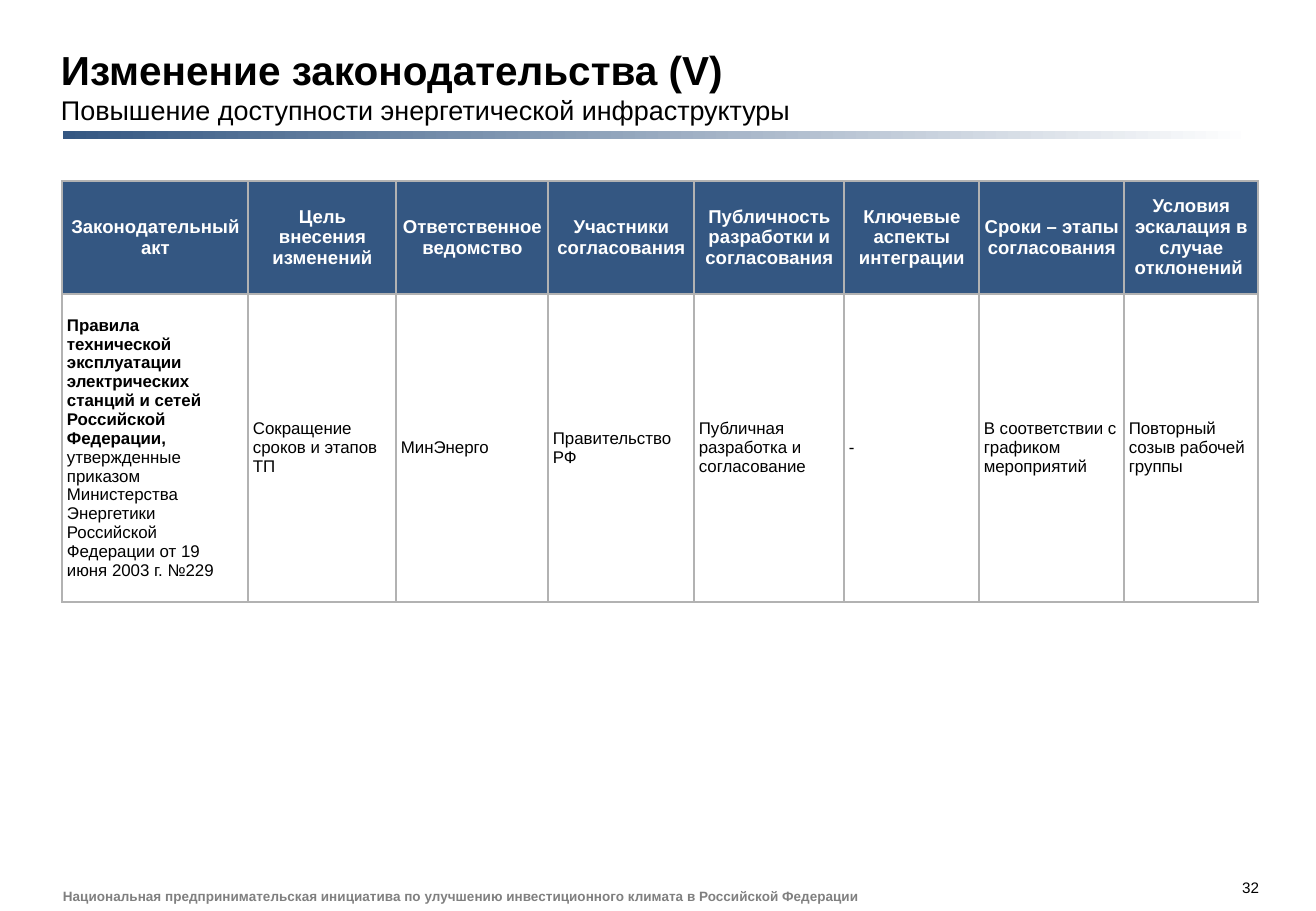
from dataclasses import dataclass

from lxml import etree
from pptx import Presentation
from pptx import util as u
from pptx.dml.color import RGBColor
from pptx.enum import shapes, text
from pptx.oxml import ns

EMU_PER_PX = 7526


@dataclass(frozen=True)
class Theme:
    font: str = "Arial"
    navy: str = "345782"
    white: str = "FFFFFF"
    black: str = "000000"
    grey: str = "808080"
    border: str = "B2B2B2"
    title_size: int = 24
    subtitle_size: int = 16
    header_size: int = 11
    body_size: int = 10
    number_size: int = 9
    footer_size: int = 8


THEME = Theme()

COLUMNS = [
    (186, "Законодательный акт",
     ["Правила технической эксплуатации электрических станций и сетей Российской Федерации, ",
      "утвержденные приказом Министерства Энергетики Российской Федерации от 19 июня 2003 г. №229"]),
    (148, "Цель внесения изменений", ["Сокращение сроков и этапов ТП"]),
    (152, "Ответственное ведомство", ["МинЭнерго"]),
    (146, "Участники согласования", ["Правительство РФ"]),
    (150, "Публичность разработки и согласования", ["Публичная разработка и согласование"]),
    (135, "Ключевые аспекты интеграции", ["-"]),
    (145, "Сроки – этапы согласования", ["В соответствии с графиком мероприятий"]),
    (134, "Условия эскалация в случае отклонений ", ["Повторный созыв рабочей группы"]),
]
ROW_HEIGHTS = [113, 308]


def px(length):
    return u.Emu(length * EMU_PER_PX)


def style(run, size, color, bold=False):
    run.font.name = THEME.font
    run.font.size = u.Pt(size)
    run.font.bold = bold
    run.font.color.rgb = RGBColor.from_string(color)


def set_insets(target, left, top, right, bottom):
    target.margin_left, target.margin_top = px(left), px(top)
    target.margin_right, target.margin_bottom = px(right), px(bottom)


def add_heading(slide, box, heading, subheading):
    left, top, width, height = box
    title = slide.shapes.title
    title.left, title.top, title.width, title.height = map(px, box)
    frame = title.text_frame
    frame.text = f"{heading}\v{subheading}"
    frame.auto_size = text.MSO_AUTO_SIZE.NONE
    frame.vertical_anchor = text.MSO_ANCHOR.BOTTOM
    set_insets(frame, 0, 6, 0, 6)
    paragraph = frame.paragraphs[0]
    paragraph.alignment = text.PP_ALIGN.LEFT
    heading_run, subheading_run = paragraph.runs
    style(heading_run, THEME.title_size, THEME.black, True)
    style(subheading_run, THEME.subtitle_size, THEME.black)

    rule = slide.shapes.add_shape(
        shapes.MSO_SHAPE.RECTANGLE,
        px(left + 2), px(top + height - 1), px(width - 4), px(8))
    rule.shadow.inherit = False
    rule.line.fill.background()
    rule.fill.gradient()
    rule.fill.gradient_angle = 0
    for stop, position, color in zip(rule.fill.gradient_stops, (0, 1), (THEME.navy, THEME.white)):
        stop.position = position
        stop.color.rgb = RGBColor.from_string(color)


def add_borders(cell):
    properties = cell._tc.get_or_add_tcPr()
    for index, side in enumerate(("lnL", "lnR", "lnT", "lnB")):
        line = etree.Element(ns.qn(f"a:{side}"), w=str(u.Pt(1)))
        fill = etree.SubElement(line, ns.qn("a:solidFill"))
        etree.SubElement(fill, ns.qn("a:srgbClr"), val=THEME.border)
        properties.insert(index, line)


def fill_cell(cell, parts, fill, size, color, bold_parts, alignment):
    cell.fill.solid()
    cell.fill.fore_color.rgb = RGBColor.from_string(fill)
    cell.vertical_anchor = text.MSO_ANCHOR.MIDDLE
    set_insets(cell, 5, 12, 4, 12)
    add_borders(cell)
    paragraph = cell.text_frame.paragraphs[0]
    paragraph.alignment = alignment
    for index, part in enumerate(parts):
        run = paragraph.add_run()
        run.text = part
        style(run, size, color, index < bold_parts)


def add_law_table(slide, box):
    table = slide.shapes.add_table(len(ROW_HEIGHTS), len(COLUMNS), *map(px, box)).table
    table.first_row = False
    table.horz_banding = False
    for row, height in zip(table.rows, ROW_HEIGHTS):
        row.height = px(height)
    for index, (width, header, body) in enumerate(COLUMNS):
        table.columns[index].width = px(width)
        fill_cell(table.cell(0, index), [header], THEME.navy, THEME.header_size,
                  THEME.white, 1, text.PP_ALIGN.CENTER)
        fill_cell(table.cell(1, index), body, THEME.white, THEME.body_size,
                  THEME.black, len(body) - 1, text.PP_ALIGN.LEFT)


def add_label(slide, box, words, size, color, bold, alignment):
    frame = slide.shapes.add_textbox(*map(px, box)).text_frame
    frame.word_wrap = True
    frame.vertical_anchor = text.MSO_ANCHOR.MIDDLE
    set_insets(frame, 0, 0, 0, 0)
    frame.text = words
    paragraph = frame.paragraphs[0]
    paragraph.alignment = alignment
    style(paragraph.runs[0], size, color, bold)


def add_footer(slide, box):
    left, top, width, height = box
    add_label(slide, (left, top + 10, width - 100, 16),
              "Национальная предпринимательская инициатива по улучшению "
              "инвестиционного климата в Российской Федерации",
              THEME.footer_size, THEME.grey, True, text.PP_ALIGN.LEFT)
    add_label(slide, (left + width - 40, top, 40, 18), "32",
              THEME.number_size, THEME.black, False, text.PP_ALIGN.RIGHT)


def main():
    deck = Presentation()
    deck.slide_width, deck.slide_height = px(1316), px(911)
    slide = deck.slides.add_slide(deck.slide_layouts[5])
    add_heading(slide, (61, 22, 1194, 110), "Изменение законодательства (V)",
                "Повышение доступности энергетической инфраструктуры")
    add_law_table(slide, (62, 181, sum(column[0] for column in COLUMNS), sum(ROW_HEIGHTS)))
    add_footer(slide, (63, 878, 1196, 26))
    deck.save("out.pptx")


if __name__ == "__main__":
    main()
